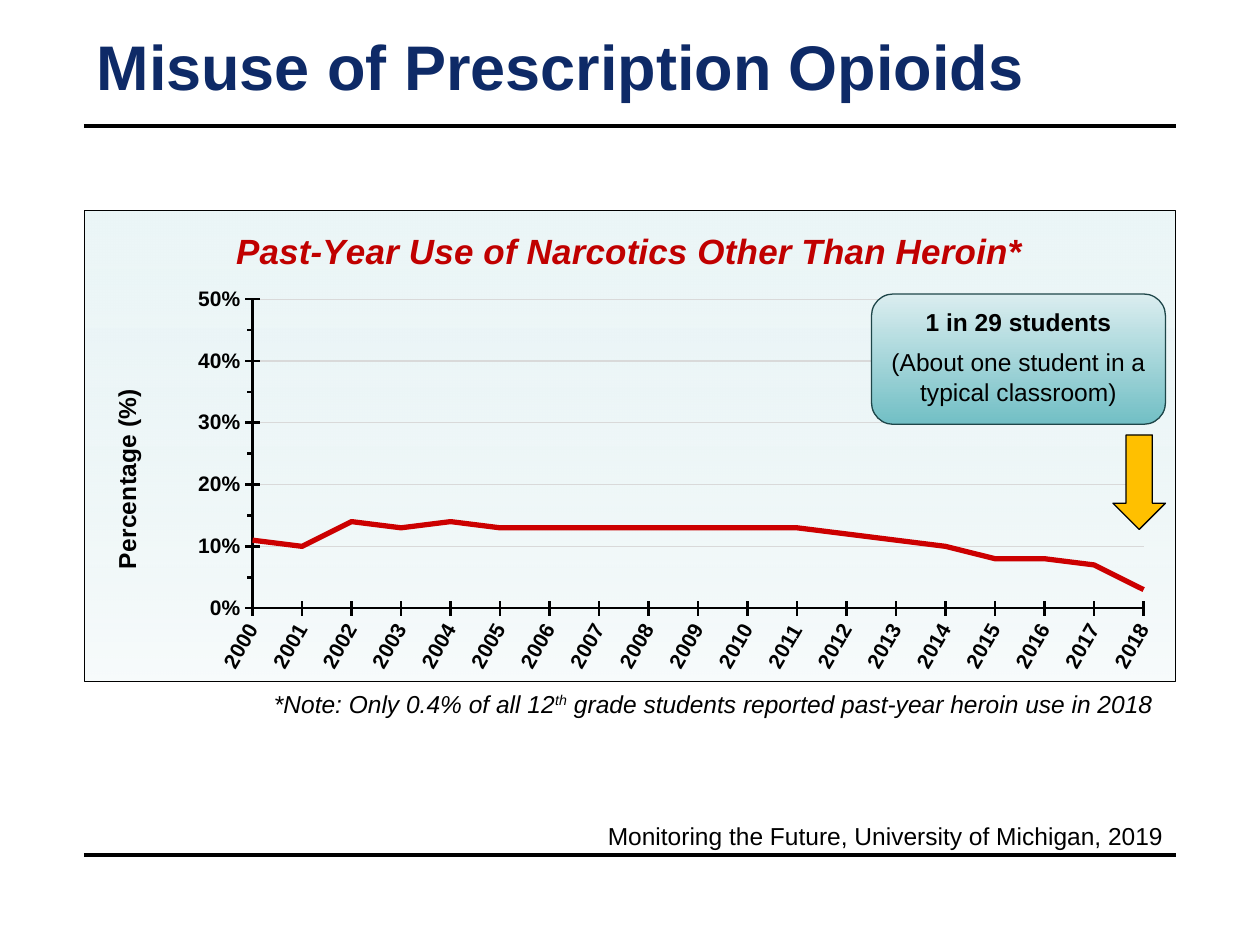
from lxml import etree
from pptx import Presentation
from pptx.chart.data import XyChartData
from pptx.dml.color import RGBColor
from pptx.enum.chart import XL_CHART_TYPE, XL_TICK_MARK
from pptx.enum.shapes import MSO_CONNECTOR, MSO_SHAPE
from pptx.enum.text import MSO_ANCHOR, PP_ALIGN
from pptx.oxml.ns import qn
from pptx.util import Pt

SCATTER = XL_CHART_TYPE.XY_SCATTER_LINES_NO_MARKERS
CROSS, OUTSIDE, NO_TICK = XL_TICK_MARK.CROSS, XL_TICK_MARK.OUTSIDE, XL_TICK_MARK.NONE
LEFT, CENTER, RIGHT = PP_ALIGN.LEFT, PP_ALIGN.CENTER, PP_ALIGN.RIGHT
TOP, MIDDLE, BOTTOM = MSO_ANCHOR.TOP, MSO_ANCHOR.MIDDLE, MSO_ANCHOR.BOTTOM
DRAWING_NS = "http://schemas.openxmlformats.org/drawingml/2006/main"

COLORS = {
    "black": "000000", "navy": "0E2A67", "title red": "C00000", "line red": "CC0000",
    "grid": "D9D9D9", "pale teal": "DAEDEF", "mist": "EBF6F7", "teal": "72BFC5",
    "dark teal": "1E4649", "gold": "FFC000",
}
FONT = "Arial"

TITLE = "Misuse of Prescription Opioids"
SOURCE = "Monitoring the Future, University of Michigan, 2019"
NOTE = ["*Note: Only 0.4% of all 12", "th",
        " grade students reported past-year heroin use in 2018"]
CALLOUT = ["1 in 29 students", "(About one student in a typical classroom)"]
CHART_TITLE = "Past-Year Use of Narcotics Other Than Heroin*"
AXIS_TITLE = "Percentage (%)"
FIRST_YEAR = 2000
SHARES = [0.11, 0.1, 0.14, 0.13, 0.14, 0.13, 0.13, 0.13, 0.13, 0.13,
          0.13, 0.13, 0.12, 0.11, 0.1, 0.08, 0.08, 0.07, 0.03]

MARGIN, CONTENT_WIDTH = 48, 624
RULES = [72, 488.6]


def color(name):
    return RGBColor.from_string(COLORS[name])


def style(font, size, name="black", bold=False, italic=False):
    font.name, font.size, font.bold, font.italic = FONT, Pt(size), bold, italic
    font.color.rgb = color(name)


def outline(line, name, width):
    line.color.rgb = color(name)
    line.width = Pt(width)


def gradient(stops, angle):
    """Return a linear gradFill; stops are (position %, colour, opacity %)."""
    fill = etree.Element(qn("a:gradFill"), rotWithShape="1")
    stop_list = etree.SubElement(fill, qn("a:gsLst"))
    for position, name, opacity in stops:
        stop = etree.SubElement(stop_list, qn("a:gs"), pos=str(position * 1000))
        tint = etree.SubElement(stop, qn("a:srgbClr"), val=COLORS[name])
        if opacity < 100:
            etree.SubElement(tint, qn("a:alpha"), val=str(opacity * 1000))
    etree.SubElement(fill, qn("a:lin"), ang=str(angle * 60000), scaled="0")
    return fill


def place(part, **fractions):
    """Give a chart part a manual layout in fractions of the chart."""
    for old in part.findall(qn("c:layout")):
        part.remove(old)
    layout = etree.Element(qn("c:layout"))
    manual = etree.SubElement(layout, qn("c:manualLayout"))
    if "w" in fractions:
        etree.SubElement(manual, qn("c:layoutTarget"), val="inner")
    for side in "xy":
        etree.SubElement(manual, qn(f"c:{side}Mode"), val="edge")
    for key, value in fractions.items():
        etree.SubElement(manual, qn(f"c:{key}"), val=str(value))
    text = part.find(qn("c:tx"))
    if text is None:
        part.insert(0, layout)
    else:
        text.addnext(layout)


def rotate(part, degrees):
    body = part.find(".//" + qn("a:bodyPr"))
    body.set("rot", str(degrees * 60000))
    body.set("vert", "horz")


def add_rule(page, y):
    rule = page.shapes.add_connector(
        MSO_CONNECTOR.STRAIGHT, Pt(MARGIN), Pt(y), Pt(MARGIN + CONTENT_WIDTH), Pt(y))
    outline(rule.line, "black", 2.25)
    etree.SubElement(rule.element.spPr, qn("a:effectLst"))


def add_line_of_text(page, left, top, width, height, spans, anchor, italic=False):
    box = page.shapes.add_textbox(Pt(left), Pt(top), Pt(width), Pt(height))
    box.text_frame.word_wrap = True
    box.text_frame.vertical_anchor = anchor
    para = box.text_frame.paragraphs[0]
    para.alignment = RIGHT
    for text in spans:
        para.add_run().text = text
    style(para.font, 14, italic=italic)
    return para


def add_shape(page, kind, left, top, width, height, line_color):
    shape = page.shapes.add_shape(kind, Pt(left), Pt(top), Pt(width), Pt(height))
    shape.shadow.inherit = False
    outline(shape.line, line_color, 0.75)
    return shape


def add_misuse_chart(page):
    data = XyChartData(number_format="0%")
    series = data.add_series("Series 1")
    for year, share in enumerate(SHARES, FIRST_YEAR):
        series.add_data_point(year, share)
    chart = page.shapes.add_chart(
        SCATTER, Pt(MARGIN), Pt(120), Pt(CONTENT_WIDTH), Pt(270), data).chart
    style(chart.font, 10)
    chart.has_legend = False
    plot = chart.plots[0]
    plot.vary_by_categories = False
    outline(plot.series[0].format.line, "line red", 3)

    chart.has_title = True
    heading = chart.chart_title.text_frame
    heading.text = CHART_TITLE
    style(heading.paragraphs[0].runs[0].font, 20, "title red", bold=True, italic=True)

    years, shares = chart.category_axis, chart.value_axis
    last_year = FIRST_YEAR + len(SHARES) - 1
    for axis, low, high, step, pattern, minor in [
            (years, FIRST_YEAR, last_year, 1, "0", NO_TICK),
            (shares, 0, 0.5, 0.1, "0%", OUTSIDE)]:
        axis.minimum_scale, axis.maximum_scale, axis.major_unit = low, high, step
        axis.major_tick_mark, axis.minor_tick_mark = CROSS, minor
        axis.has_major_gridlines = axis is shares
        axis.tick_labels.number_format = pattern
        axis.tick_labels.number_format_is_linked = False
        style(axis.tick_labels.font, 12, bold=True)
        outline(axis.format.line, "black", 1.5)
    shares.minor_unit = 0.05
    outline(shares.major_gridlines.format.line, "grid", 0.75)
    shares.axis_title.text_frame.text = AXIS_TITLE
    style(shares.axis_title.text_frame.paragraphs[0].runs[0].font, 14, bold=True)

    body = chart._chartSpace.find(qn("c:chart"))
    area = body.find(qn("c:plotArea"))
    year_axis, share_axis = area.findall(qn("c:valAx"))
    rotate(year_axis, -60)
    vertical_title = share_axis.find(qn("c:title"))
    rotate(vertical_title, -90)
    place(vertical_title, x=0.02, y=0.37)
    place(body.find(qn("c:title")), x=0.133, y=0.025)
    place(area, x=0.154, y=0.188, w=0.817, h=0.656)

    frame = etree.Element(qn("c:spPr"), nsmap={"a": DRAWING_NS})
    frame.append(gradient([(0, "pale teal", 20), (100, "mist", 100)], 270))
    border = etree.SubElement(frame, qn("a:ln"), w=str(Pt(0.75)))
    paint = etree.SubElement(border, qn("a:solidFill"))
    etree.SubElement(paint, qn("a:srgbClr"), val=COLORS["black"])
    body.addnext(frame)


def add_callout(page):
    callout = add_shape(page, MSO_SHAPE.ROUNDED_RECTANGLE, 498, 168, 168, 74.5, "dark teal")
    callout.element.spPr.find(qn("a:prstGeom")).addnext(
        gradient([(0, "pale teal", 100), (100, "teal", 100)], 90))
    frame = callout.text_frame
    frame.word_wrap = True
    frame.vertical_anchor = MIDDLE
    frame.margin_bottom = Pt(6.5)
    frame.text = "\n".join(CALLOUT)
    for index, para in enumerate(frame.paragraphs):
        para.alignment = CENTER
        style(para.font, 14, bold=index == 0)
        # The shape's own style would otherwise turn the text white.
        para.runs[0].font.color.rgb = color("black")
    frame.paragraphs[0].space_after = Pt(6)

    arrow = add_shape(page, MSO_SHAPE.DOWN_ARROW, 636, 248.5, 30, 54, "black")
    arrow.fill.solid()
    arrow.fill.fore_color.rgb = color("gold")


def main():
    deck = Presentation()
    deck.slide_width, deck.slide_height = Pt(720), Pt(540)
    page = deck.slides.add_slide(deck.slide_layouts[5])
    for y in RULES:
        add_rule(page, y)

    title = page.shapes.title
    title.left, title.top, title.width, title.height = (
        Pt(MARGIN), Pt(12), Pt(CONTENT_WIDTH), Pt(54))
    title.text_frame.text = TITLE
    title.text_frame.vertical_anchor = MIDDLE
    title.text_frame.margin_bottom = Pt(7)
    title.text_frame.paragraphs[0].alignment = LEFT
    style(title.text_frame.paragraphs[0].font, 36, "navy", bold=True)

    add_line_of_text(page, MARGIN, 465, CONTENT_WIDTH, 24.5, [SOURCE], BOTTOM)
    add_misuse_chart(page)
    add_callout(page)
    note = add_line_of_text(page, 140, 390, 526, 22, NOTE, TOP, italic=True)
    note.runs[1].font._element.set("baseline", "30000")
    deck.save("out.pptx")


if __name__ == "__main__":
    main()
